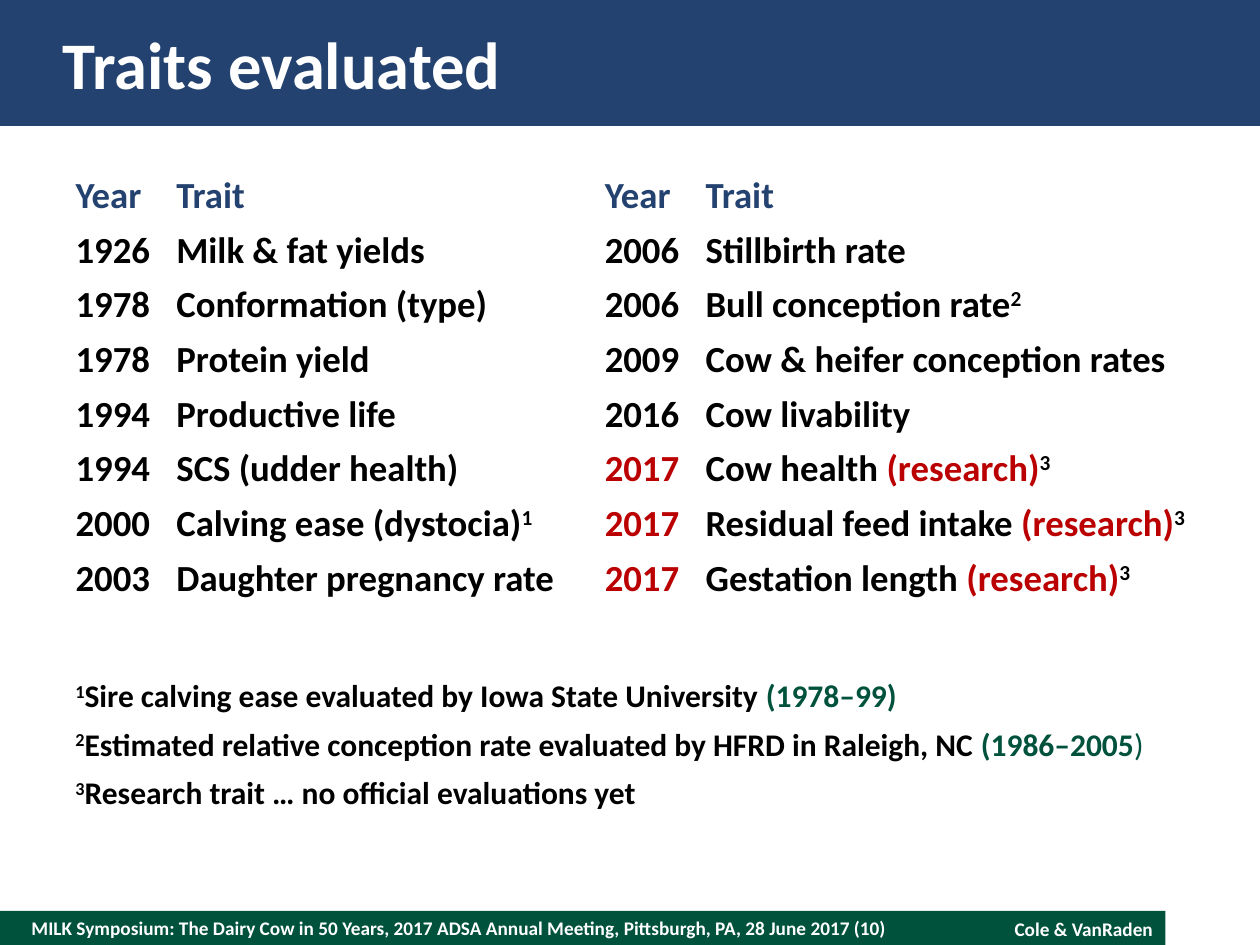
import pptx
import pptx.dml.color
import pptx.enum.shapes
import pptx.enum.text
import pptx.util

Pt = pptx.util.Pt
RGBColor = pptx.dml.color.RGBColor
ALIGN = pptx.enum.text.PP_ALIGN
ANCHOR = pptx.enum.text.MSO_ANCHOR

NAVY = RGBColor(0x24, 0x42, 0x70)
GREEN = RGBColor(0x00, 0x52, 0x3C)
RED = RGBColor(0xBA, 0x00, 0x00)
BLACK = RGBColor(0, 0, 0)
WHITE = RGBColor(255, 255, 255)
FONT = "Calibri"

TITLE = "Traits evaluated"
FOOTER = ("MILK Symposium: The Dairy Cow in 50 Years, 2017 ADSA Annual Meeting, "
          "Pittsburgh, PA, 28 June 2017 (10)")
AUTHORS = "Cole & VanRaden"
HEADINGS = ("Year", "Trait")
RESEARCH = "(research)"

# Year, trait, footnote mark
EARLY_TRAITS = [
    ("1926", "Milk & fat yields", ""),
    ("1978", "Conformation (type)", ""),
    ("1978", "Protein yield", ""),
    ("1994", "Productive life", ""),
    ("1994", "SCS (udder health)", ""),
    ("2000", "Calving ease (dystocia)", "1"),
    ("2003", "Daughter pregnancy rate", ""),
]
LATE_TRAITS = [
    ("2006", "Stillbirth rate", ""),
    ("2006", "Bull conception rate", "2"),
    ("2009", "Cow & heifer conception rates", ""),
    ("2016", "Cow livability", ""),
    ("2017", "Cow health ", "3"),
    ("2017", "Residual feed intake ", "3"),
    ("2017", "Gestation length ", "3"),
]
# Mark, note, period, closing character in regular weight
NOTES = [
    ("1", "Sire calving ease evaluated by Iowa State University ", "(1978–99)", ""),
    ("2", "Estimated relative conception rate evaluated by HFRD in Raleigh, NC ",
     "(1986–2005", ")"),
    ("3", "Research trait … no official evaluations yet", "", ""),
]
COLUMN_WIDTHS = (57.6, 244.8, 57.6, 291.6)
ROW_HEIGHT = 31.2


def add_span(para, text, size, color, bold=True, raised=False):
    if not text:
        return
    span = para.add_run()
    span.text = text
    span.font.name = FONT
    span.font.size = Pt(size)
    span.font.bold = bold
    span.font.color.rgb = color
    if raised:
        span.font._element.set("baseline", "30000")


def add_bar(page, left, top, width, height, color):
    bar = page.shapes.add_shape(pptx.enum.shapes.MSO_SHAPE.RECTANGLE,
                                Pt(left), Pt(top), Pt(width), Pt(height))
    bar.shadow.inherit = False
    bar.fill.solid()
    bar.fill.fore_color.rgb = color
    bar.line.fill.background()


def add_box(page, left, top, width, height, inset=True, anchor=ANCHOR.TOP):
    frame = page.shapes.add_textbox(Pt(left), Pt(top), Pt(width), Pt(height)).text_frame
    frame.word_wrap = True
    frame.vertical_anchor = anchor
    if not inset:
        frame.margin_left = frame.margin_right = 0
        frame.margin_top = frame.margin_bottom = 0
    return frame


def cell_para(table, row, column):
    """Give the cell a white fill and return its first paragraph."""
    cell = table.cell(row, column)
    cell.fill.solid()
    cell.fill.fore_color.rgb = WHITE
    para = cell.text_frame.paragraphs[0]
    para.line_spacing = Pt(24)
    return para


def add_trait_table(page):
    groups = (EARLY_TRAITS, LATE_TRAITS)
    rows = len(EARLY_TRAITS) + 1
    table = page.shapes.add_table(rows, len(COLUMN_WIDTHS), Pt(36), Pt(97.2),
                                  Pt(sum(COLUMN_WIDTHS)), Pt(rows * ROW_HEIGHT)).table
    for column, width in zip(table.columns, COLUMN_WIDTHS):
        column.width = Pt(width)
    for group, traits in enumerate(groups):
        first = group * len(HEADINGS)
        for offset, heading in enumerate(HEADINGS):
            add_span(cell_para(table, 0, first + offset), heading, 21, NAVY)
        for row, (year, trait, mark) in enumerate(traits, start=1):
            in_research = mark == "3"
            add_span(cell_para(table, row, first), year, 21, RED if in_research else BLACK)
            para = cell_para(table, row, first + 1)
            add_span(para, trait, 21, BLACK)
            add_span(para, RESEARCH if in_research else "", 21, RED)
            add_span(para, mark, 21, BLACK, raised=True)


def add_notes(page):
    frame = add_box(page, 36, 383, 648, 85)
    for index, (mark, note, period, closing) in enumerate(NOTES):
        para = frame.add_paragraph() if index else frame.paragraphs[0]
        para.space_after = Pt(6)
        add_span(para, mark, 18, BLACK, raised=True)
        add_span(para, note, 18, BLACK)
        add_span(para, period, 18, GREEN)
        add_span(para, closing, 18, GREEN, bold=False)


def main():
    deck = pptx.Presentation()
    deck.slide_width, deck.slide_height = Pt(720), Pt(540)
    page = deck.slides.add_slide(deck.slide_layouts[6])

    add_bar(page, 0, 520.5, 666, 19.5, GREEN)
    add_bar(page, 0, 0, 720, 72, NAVY)
    footer = add_box(page, 18, 520.5, 504, 19.5, inset=False, anchor=ANCHOR.MIDDLE)
    add_span(footer.paragraphs[0], FOOTER, 11, WHITE)
    authors = add_box(page, 522, 520.5, 144, 20.6).paragraphs[0]
    authors.alignment = ALIGN.RIGHT
    add_span(authors, AUTHORS, 11, WHITE)
    title = add_box(page, 36, 14.4, 648, 43.2, inset=False, anchor=ANCHOR.MIDDLE)
    add_span(title.paragraphs[0], TITLE, 38, WHITE)

    add_trait_table(page)
    add_notes(page)
    deck.save("out.pptx")


if __name__ == "__main__":
    main()
